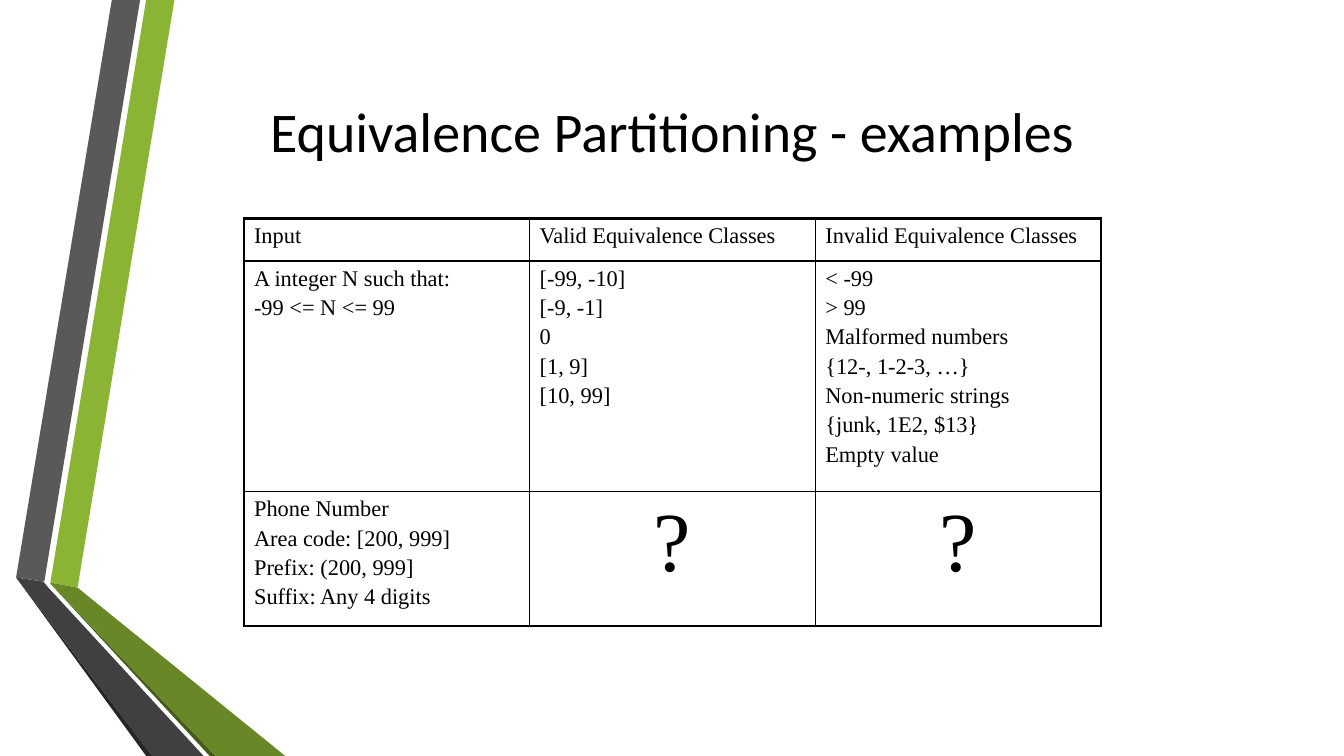
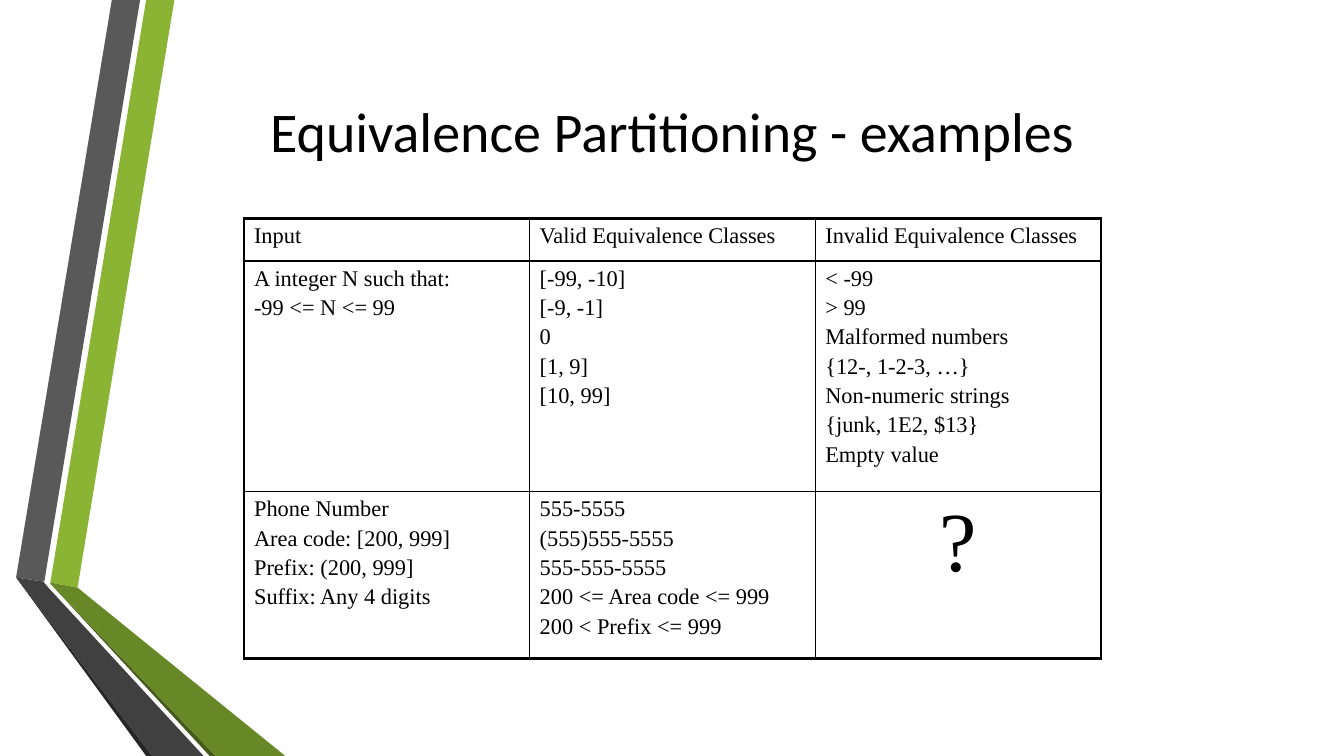
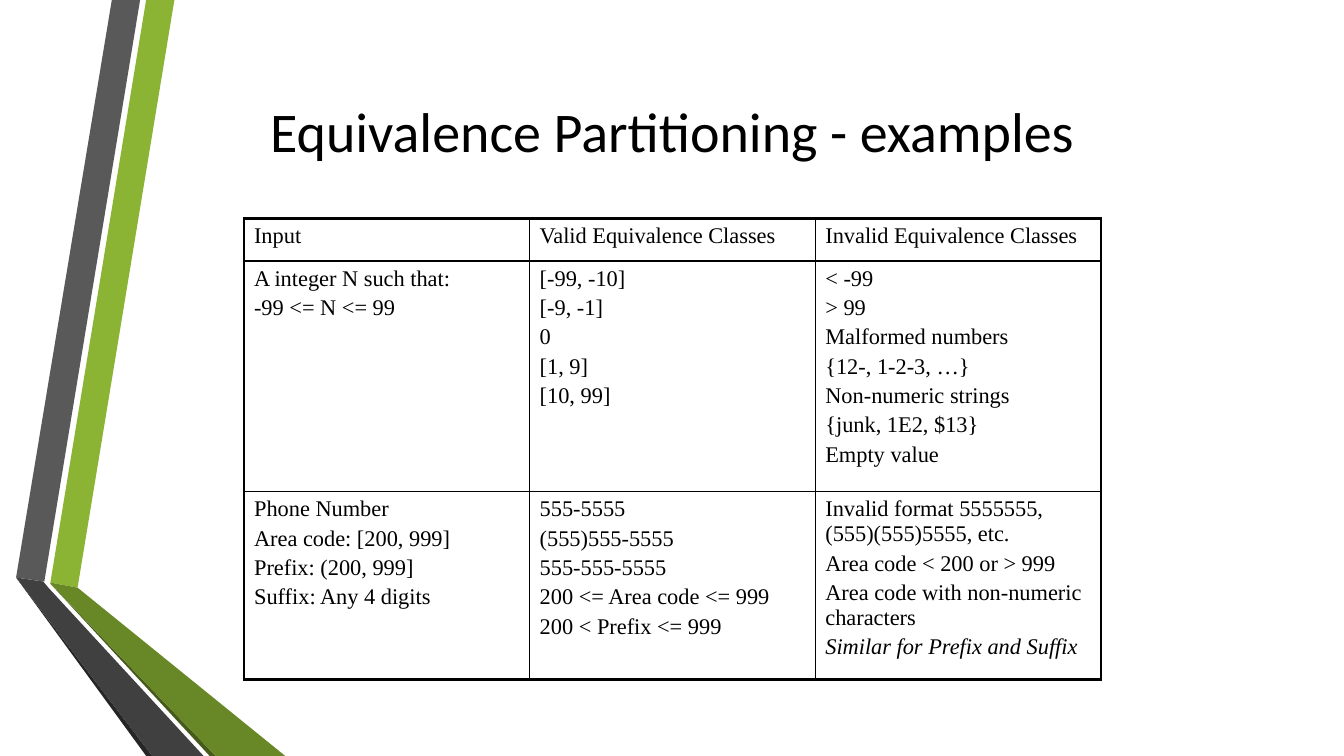
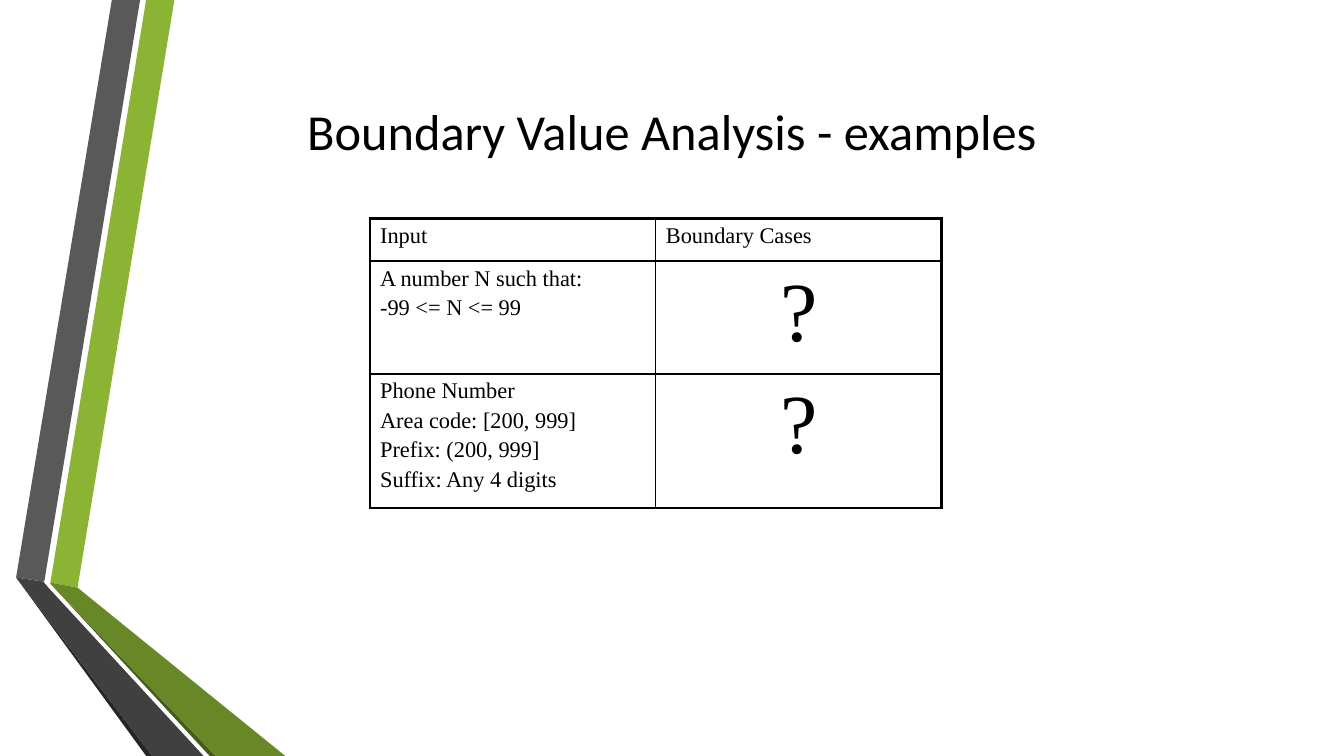
from collections import namedtuple

from lxml.etree import SubElement
from pptx import Presentation
from pptx.dml.color import RGBColor
from pptx.enum.text import MSO_ANCHOR as Anchor, MSO_AUTO_SIZE as AutoSize, PP_ALIGN as Align
from pptx.oxml.ns import qn
from pptx.util import Pt

PX = 9144
TITLE_ONLY = 5
COLOURS = {
    "text": "000000",
    "green": "8BB434",
    "grey": "595959",
    "grey_edge": "262626",
    "green_edge": "465A1A",
    "green_fold": "688727",
    "grey_fold": "404040",
}
BANDS = [
    ("green", [(50, 578), (77, 583), (173, 0), (145, 0)]),
    ("grey", [(139, 0), (111, 0), (16, 573), (44, 577)]),
    ("grey_edge", [(16, 573), (145, 750), (151, 750)]),
    ("green_edge", [(50, 579), (208, 750), (214, 750)]),
    ("green_fold", [(50, 579), (214, 750), (283, 750), (77, 583), (50, 578)]),
    ("grey_fold", [(202, 750), (48, 583), (43, 577), (16, 573), (151, 750)]),
]
Line = namedtuple("Line", "text size italic align", defaults=(16, False, Align.LEFT))


class Deck:
    title_font = "Calibri"
    table_font = "Times New Roman"
    outer_border = Pt(2.25)
    inner_border = Pt(1)

    def __init__(self):
        self.presentation = Presentation()
        self.presentation.slide_width = 1333 * PX
        self.presentation.slide_height = 750 * PX
        self.slide = None

    def add_slide(self, title, size):
        layout = self.presentation.slide_layouts[TITLE_ONLY]
        self.slide = self.presentation.slides.add_slide(layout)
        for colour, points in BANDS:
            self.add_band(colour, points)
        self.set_title(title, size)

    def add_band(self, colour, points):
        builder = self.slide.shapes.build_freeform(*points[0], scale=PX)
        builder.add_line_segments(points[1:], close=True)
        shape = builder.convert_to_shape()
        shape.shadow.inherit = False
        shape.fill.solid()
        shape.fill.fore_color.rgb = RGBColor.from_string(COLOURS[colour])
        shape.line.fill.background()

    def set_title(self, text, size):
        shape = self.slide.shapes.title
        shape.left, shape.top = 100 * PX, 67 * PX
        shape.width, shape.height = 1133 * PX, 125 * PX
        frame = shape.text_frame
        frame.word_wrap = True
        frame.auto_size = AutoSize.NONE
        frame.vertical_anchor = Anchor.MIDDLE
        paragraph = frame.paragraphs[0]
        paragraph.alignment = Align.CENTER
        self.add_run(paragraph, text, self.title_font, size)

    def add_run(self, paragraph, text, font, size, italic=False):
        run = paragraph.add_run()
        run.text = text
        run.font.name = font
        run.font.size = Pt(size)
        run.font.italic = italic
        run.font.color.rgb = RGBColor.from_string(COLOURS["text"])

    def add_table(self, left, top, width, heights, rows):
        row_count, column_count = len(rows), len(rows[0])
        frame = self.slide.shapes.add_table(
            row_count, column_count, left * PX, top * PX, width * PX, sum(heights) * PX)
        table = frame.table
        table.first_row = table.horz_banding = False
        for row, height in zip(table.rows, heights):
            row.height = height * PX
        for row_index, row in enumerate(rows):
            for column_index, lines in enumerate(row):
                cell = table.cell(row_index, column_index)
                self.fill_cell(cell, lines)
                self.set_borders(cell, {
                    "L": column_index == 0,
                    "R": column_index == column_count - 1,
                    "T": row_index == 0,
                    "B": row_index == row_count - 1,
                })
                cell.fill.background()

    def fill_cell(self, cell, lines):
        frame = cell.text_frame
        for index, line in enumerate(lines):
            if isinstance(line, str):
                line = Line(line)
            paragraph = frame.add_paragraph() if index else frame.paragraphs[0]
            paragraph.alignment = line.align
            paragraph.space_before = Pt(line.size * 0.2 if index else 0)
            self.add_run(paragraph, line.text, self.table_font, line.size, line.italic)

    def set_borders(self, cell, outer_sides):
        properties = cell._tc.get_or_add_tcPr()
        for side, is_outer in outer_sides.items():
            width = self.outer_border if is_outer else self.inner_border
            border = SubElement(properties, qn(f"a:ln{side}"), w=str(width))
            fill = SubElement(border, qn("a:solidFill"))
            SubElement(fill, qn("a:srgbClr"), val=COLOURS["text"])


QUESTION = [Line("?", size=60, align=Align.CENTER)]
PHONE_INPUT = ["Phone Number", "Area code: [200, 999]", "Prefix: (200, 999]", "Suffix: Any 4 digits"]
PHONE_VALID = [
    "555-5555",
    "(555)555-5555",
    "555-555-5555",
    "200 <= Area code <= 999",
    "200 < Prefix <= 999",
]
PHONE_INVALID = [
    "Invalid format 5555555, (555)(555)5555, etc.",
    "Area code < 200 or > 999",
    "Area code with non-numeric characters",
    Line("Similar for Prefix and Suffix", italic=True),
]
PARTITION_ROWS = [
    [["Input"], ["Valid Equivalence Classes"], ["Invalid Equivalence Classes"]],
    [
        ["A integer N such that:", "-99 <= N <= 99"],
        ["[-99, -10]", "[-9, -1]", "0", "[1, 9]", "[10, 99]"],
        [
            "< -99",
            "> 99",
            "Malformed numbers",
            "{12-, 1-2-3, …}",
            "Non-numeric strings",
            "{junk, 1E2, $13}",
            "Empty value",
        ],
    ],
]
PARTITION_STEPS = [
    (133, QUESTION, QUESTION),
    (165, PHONE_VALID, QUESTION),
    (186, PHONE_VALID, PHONE_INVALID),
]
BOUNDARY_ROWS = [
    [["Input"], ["Boundary Cases"]],
    [["A number N such that:", "-99 <= N <= 99"], QUESTION],
    [PHONE_INPUT, QUESTION],
]


def main():
    deck = Deck()
    for phone_height, valid, invalid in PARTITION_STEPS:
        deck.add_slide("Equivalence Partitioning - examples", 40)
        deck.add_table(242, 217, 850, [42, 229, phone_height],
                       PARTITION_ROWS + [[PHONE_INPUT, valid, invalid]])
    deck.add_slide("Boundary Value Analysis - examples", 36)
    deck.add_table(367, 217, 567, [42, 112, 133], BOUNDARY_ROWS)
    deck.presentation.save("out.pptx")


if __name__ == "__main__":
    main()
